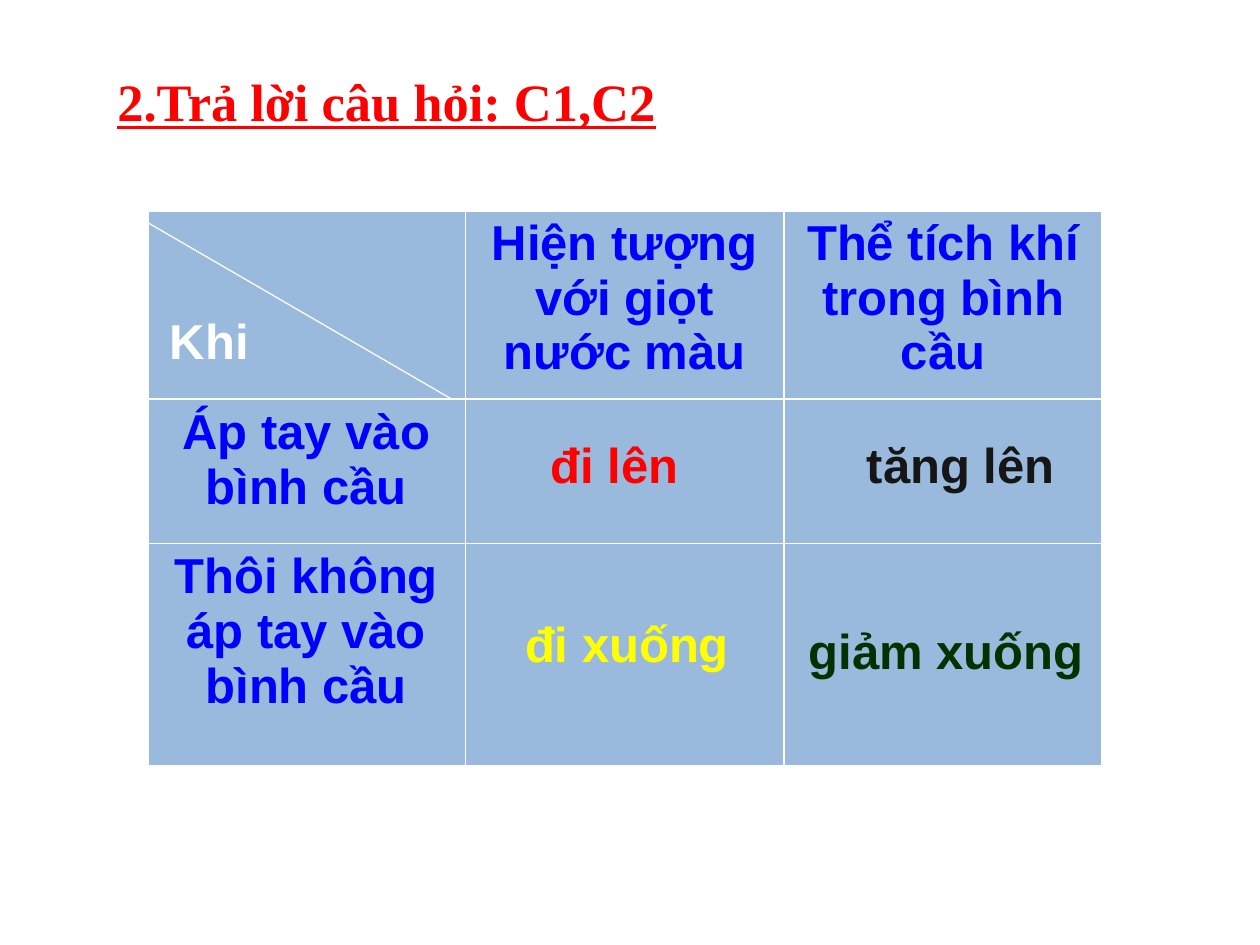
"""Build a slide with a question title and a table of answers."""
from lxml.etree import SubElement
from pptx import Presentation
from pptx.dml.color import RGBColor
from pptx.enum.shapes import MSO_CONNECTOR
from pptx.enum.text import MSO_AUTO_SIZE, PP_ALIGN
from pptx.oxml.ns import qn
from pptx.util import Pt

HUES = {"cell": "9ABADD", "white": "FFFFFF", "blue": "0000FF", "red": "FF0000",
        "yellow": "FFFF00", "green": "003300", "black": "161616"}


def write(frame, text, hue, size=28, font="Arial", align=PP_ALIGN.LEFT):
    line = frame.paragraphs[0]
    line.alignment = align
    run = line.add_run()
    run.text = text
    run.font.name = font
    run.font.size = Pt(size)
    run.font.bold = True
    run.font.color.rgb = RGBColor.from_string(HUES[hue])
    return run


def edge(cell, side, width):
    line = SubElement(cell._tc.get_or_add_tcPr(), qn(f"a:ln{side}"), w=str(Pt(width)))
    fill = SubElement(line, qn("a:solidFill"))
    SubElement(fill, qn("a:srgbClr"), val=HUES["white"])


deck = Presentation()
deck.slide_width, deck.slide_height = Pt(720), Pt(540)
slide = deck.slides.add_slide(deck.slide_layouts[6])
shapes = slide.shapes

rows = [
    (108, ["", "Hiện tượng với giọt nước màu", "Thể tích khí trong bình cầu"]),
    (82.5, ["Áp tay vào bình cầu", "", ""]),
    (127.5, ["Thôi không áp tay vào bình cầu", "", ""]),
]
table = shapes.add_table(3, 3, Pt(84), Pt(120), Pt(546), Pt(318)).table
for col in table.columns:
    col.width = Pt(182)
for r, (height, texts) in enumerate(rows):
    table.rows[r].height = Pt(height)
    for c, text in enumerate(texts):
        cell = table.cell(r, c)
        outer = {"L": c == 0, "R": c == 2, "T": r == 0, "B": r == 2}
        for side, thick in outer.items():
            edge(cell, side, 2.25 if thick else 1)
        cell.fill.solid()
        cell.fill.fore_color.rgb = RGBColor.from_string(HUES["cell"])
        if text:
            write(cell.text_frame, text, "blue", align=PP_ALIGN.CENTER)

slash = shapes.add_connector(MSO_CONNECTOR.STRAIGHT, Pt(72), Pt(120), Pt(258), Pt(228))
slash.line.color.rgb = RGBColor.from_string(HUES["white"])
slash.line.width = Pt(0.75)
SubElement(slash._element.spPr, qn("a:effectLst"))

labels = [
    ("tăng lên", "black", 468, 245, 162, PP_ALIGN.CENTER),
    ("giảm xuống", "green", 455, 351, 175, PP_ALIGN.LEFT),
    ("Khi", "white", 90, 174, 90, PP_ALIGN.LEFT),
    ("đi lên", "red", 307.5, 245, 104.5, PP_ALIGN.LEFT),
    ("đi xuống", "yellow", 293, 347, 132.5, PP_ALIGN.LEFT),
    ("2.Trả lời câu hỏi: C1,C2", "red", 60, 36, 576, PP_ALIGN.LEFT),
]
for text, hue, left, top, width, align in labels:
    title = text.startswith("2.")
    box = shapes.add_textbox(Pt(left), Pt(top), Pt(width), Pt(43 if title else 41))
    frame = box.text_frame
    frame.word_wrap = True
    frame.auto_size = MSO_AUTO_SIZE.SHAPE_TO_FIT_TEXT
    if title:
        write(frame, text, hue, 30, "Times New Roman").font.underline = True
    else:
        write(frame, text, hue, align=align)

deck.save("out.pptx")
